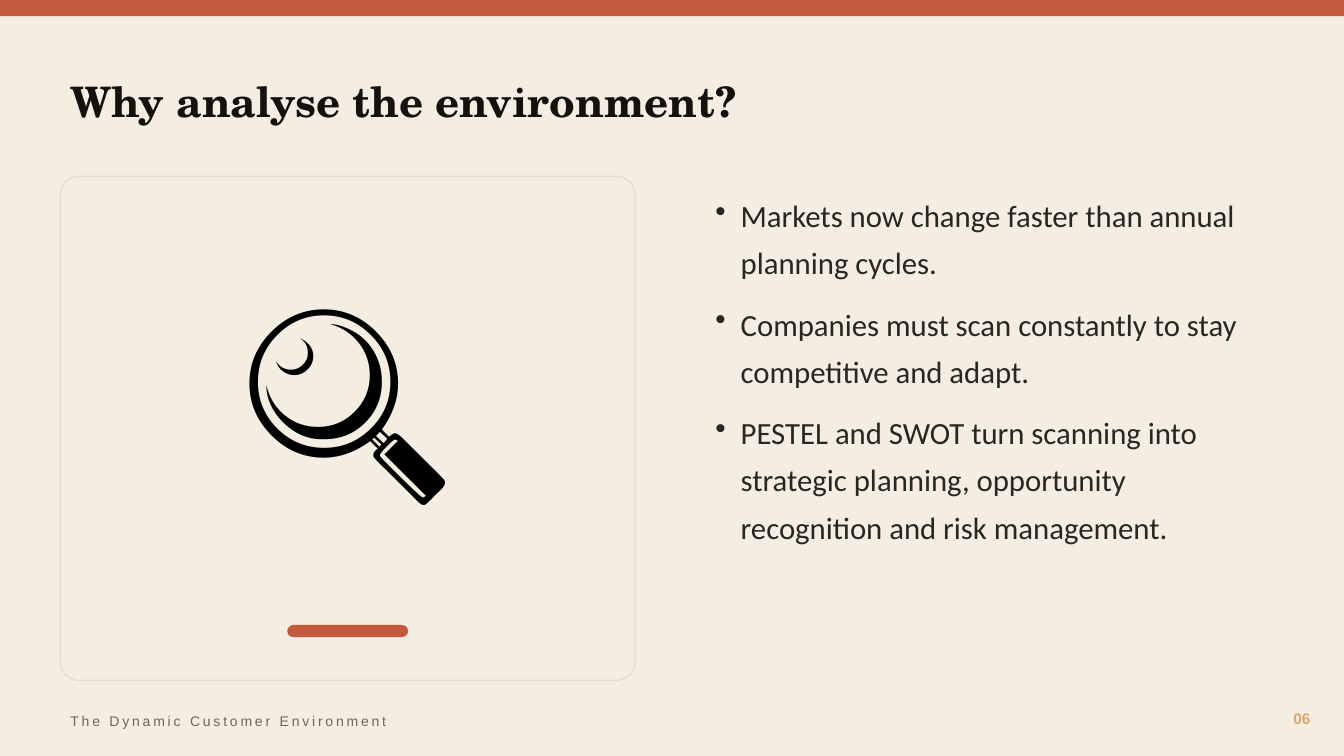
"""Build the slide on why to analyse the environment."""
from dataclasses import dataclass
from typing import Any, Optional

from lxml import etree
from pptx import Presentation
from pptx.dml.color import RGBColor
from pptx.enum import shapes, text
from pptx.oxml import ns
from pptx.util import Pt


@dataclass(frozen=True)
class Theme:
    paper: str = "F4EDE2"
    rust: str = "C45A3D"
    edge: str = "E4DDD0"
    ink: str = "16110D"
    body: str = "2A2622"
    black: str = "000000"
    gold: str = "D9A86C"
    grey: str = "6E665C"
    serif: str = "TeX Gyre Schola"
    sans: str = "Calibri"
    small: str = "Arial"
    title: float = 30
    icon: float = 150
    list: float = 22
    page: float = 11
    foot: float = 10


@dataclass(frozen=True)
class Box:
    left: float
    top: float
    width: float
    height: float

    def size(self) -> tuple:
        return tuple(map(Pt, (self.left, self.top, self.width, self.height)))


@dataclass(frozen=True)
class Panel:
    box: Box
    fill: str
    edge: Optional[str] = None
    round: Optional[float] = None


@dataclass(frozen=True)
class Label:
    box: Box
    lines: tuple[str, ...]
    font: str
    size: float
    color: str
    bold: bool = False
    align: Any = text.PP_ALIGN.LEFT
    anchor: Any = text.MSO_ANCHOR.MIDDLE
    bullet: Optional[str] = None
    track: float = 0


THEME = Theme()
WIDTH, HEIGHT = 960, 540
LEFT = 43.2
CARD = Box(LEFT, 126, 410.4, 360)
DASH = 86.4
INDENT = 18
LIST = {"line_spacing": 1.28, "space_after": Pt(10)}

PANELS = (
    Panel(Box(0, 0, WIDTH, 11.52), THEME.rust),
    Panel(CARD, THEME.paper, THEME.edge, 0.036),
    Panel(Box(CARD.left + (CARD.width - DASH) / 2, 446.4, DASH, 8.64),
          THEME.rust, round=0.5),
)

LABELS = (
    Label(Box(LEFT, 36, 871.2, 72), ("Why analyse the environment?",),
          THEME.serif, THEME.title, THEME.ink, bold=True),
    Label(Box(CARD.left, CARD.top, CARD.width, 295.2), ("🔍",),
          THEME.sans, THEME.icon, THEME.black, align=text.PP_ALIGN.CENTER),
    Label(Box(504, 129.6, CARD.width, 360), (
        "Markets now change faster than annual planning cycles.",
        "Companies must scan constantly to stay competitive and adapt.",
        "PESTEL and SWOT turn scanning into strategic planning, "
        "opportunity recognition and risk management.",
    ), THEME.sans, THEME.list, THEME.body,
        anchor=text.MSO_ANCHOR.TOP, bullet="•"),
    Label(Box(878.4, 500.4, 64.8, 25.2), ("06",), THEME.small, THEME.page,
          THEME.gold, bold=True, align=text.PP_ALIGN.RIGHT),
    Label(Box(LEFT, 504, 576, 21.6), ("The Dynamic Customer Environment",),
          THEME.small, THEME.foot, THEME.grey, track=2),
)


def apply(item: Any, values: dict[str, Any]) -> None:
    """Set each named attribute of an item."""
    for name, value in values.items():
        setattr(item, name, value)


def paint(fill: Any, color: str) -> None:
    """Give a fill one solid colour."""
    fill.solid()
    fill.fore_color.rgb = RGBColor.from_string(color)


def panel(slide: Any, part: Panel) -> None:
    """Draw a plain or rounded panel."""
    kind = shapes.MSO_SHAPE
    form = kind.RECTANGLE if part.round is None else kind.ROUNDED_RECTANGLE
    shape = slide.shapes.add_shape(form, *part.box.size())
    shape.shadow.inherit = False
    paint(shape.fill, part.fill)
    if part.round is not None:
        shape.adjustments[0] = part.round
    if part.edge:
        paint(shape.line.fill, part.edge)
        shape.line.width = Pt(1)
    else:
        shape.line.fill.background()


def dot(para: Any, mark: str) -> None:
    """Add a hanging bullet to a paragraph."""
    props = para._p.get_or_add_pPr()
    props.set("marL", str(Pt(INDENT)))
    props.set("indent", str(-Pt(INDENT)))
    etree.SubElement(props, ns.qn("a:buChar")).set("char", mark)
    apply(para, LIST)


def label(slide: Any, part: Label) -> None:
    """Draw a text box with its paragraphs."""
    frame = slide.shapes.add_textbox(*part.box.size()).text_frame
    apply(frame, {"word_wrap": True, "vertical_anchor": part.anchor})
    face = {"name": part.font, "size": Pt(part.size), "bold": part.bold}
    for spot, line in enumerate(part.lines):
        para = frame.add_paragraph() if spot else frame.paragraphs[0]
        para.alignment = part.align
        if part.bullet:
            dot(para, part.bullet)
        run = para.add_run()
        run.text = line
        apply(run.font, face)
        run.font.color.rgb = RGBColor.from_string(part.color)
        if part.track:
            run._r.get_or_add_rPr().set("spc", str(int(part.track * 100)))


def main() -> None:
    """Build and save the deck."""
    deck = Presentation()
    apply(deck, {"slide_width": Pt(WIDTH), "slide_height": Pt(HEIGHT)})
    slide = deck.slides.add_slide(deck.slide_layouts[6])
    paint(slide.background.fill, THEME.paper)
    for part in PANELS:
        panel(slide, part)
    for part in LABELS:
        label(slide, part)
    deck.save("out.pptx")


if __name__ == "__main__":
    main()
